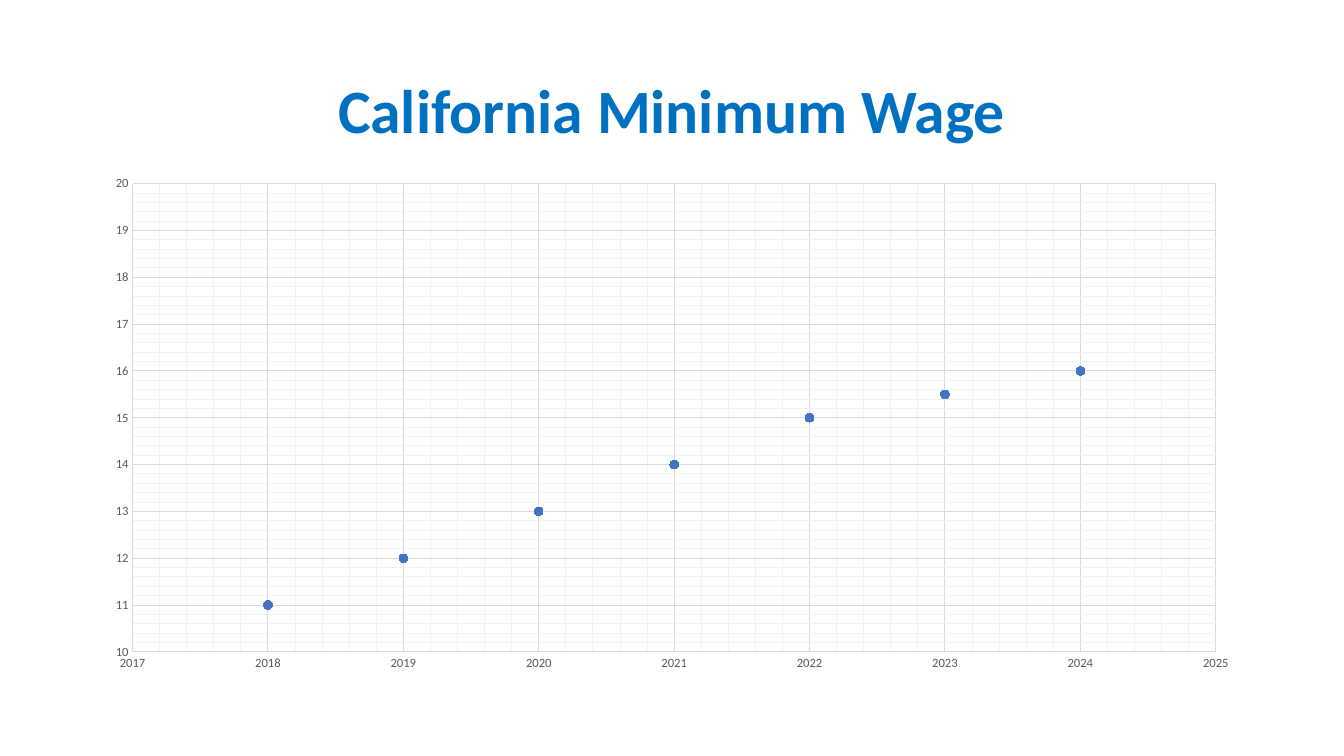
from pptx import Presentation
from pptx.chart.data import XyChartData
from pptx.dml.color import RGBColor
from pptx.enum.chart import XL_CHART_TYPE, XL_MARKER_STYLE, XL_TICK_MARK
from pptx.enum.text import MSO_ANCHOR, PP_ALIGN
from pptx.oxml import parse_xml
from pptx.oxml.ns import nsdecls
from pptx.util import Cm, Pt

SCATTER_LINES = XL_CHART_TYPE.XY_SCATTER_LINES
CIRCLE = XL_MARKER_STYLE.CIRCLE
NO_TICK = XL_TICK_MARK.NONE
MIDDLE = MSO_ANCHOR.MIDDLE
CENTER = PP_ALIGN.CENTER

HEADING = "California Minimum Wage"
SERIES_NAME = "Series 1"
WAGES = {2018: 11, 2019: 12, 2020: 13, 2021: 14, 2022: 15, 2023: 15.5, 2024: 16}
YEAR_RANGE = (2017, 2025)
WAGE_RANGE = (10, 20)
MINOR_STEP = 0.2

THEME = {
    "font": "Calibri",
    "heading": RGBColor(0x00, 0x70, 0xC0),
    "label": RGBColor(0x59, 0x59, 0x59),
    "grid": RGBColor(0xD9, 0xD9, 0xD9),
    "minor_grid": "F2F2F2",
    "dot": RGBColor(0x44, 0x72, 0xC4),
    "heading_size": Pt(44),
    "chart_size": Pt(10),
    "label_size": Pt(9),
    "grid_width": Pt(0.75),
    "series_width": Pt(2),
    "dot_size": 6,
}

LEFT, WIDTH = Cm(2.33), Cm(29.21)
CHART_TOP, CHART_HEIGHT = Cm(4.19), Cm(12.98)
PLOT_LAYOUT = {
    "x": Cm(1.01) / WIDTH,
    "y": Cm(0.44) / CHART_HEIGHT,
    "w": Cm(27.3) / WIDTH,
    "h": Cm(11.8) / CHART_HEIGHT,
}


def add_heading(slide):
    frame = slide.shapes.add_textbox(LEFT, Cm(1.01), WIDTH, Cm(3.68)).text_frame
    frame.word_wrap = True
    frame.vertical_anchor = MIDDLE
    paragraph = frame.paragraphs[0]
    paragraph.alignment = CENTER
    paragraph.line_spacing = 0.9
    run = paragraph.add_run()
    run.text = HEADING
    run.font.name = THEME["font"]
    run.font.size = THEME["heading_size"]
    run.font.bold = True
    run.font.color.rgb = THEME["heading"]


def style_line(line, color, width):
    line.color.rgb = THEME[color]
    line.width = THEME[width]


def style_axis(axis, limits):
    axis.minimum_scale, axis.maximum_scale = limits
    axis.major_unit = 1
    axis.minor_unit = MINOR_STEP
    axis.major_tick_mark = axis.minor_tick_mark = NO_TICK
    axis.has_major_gridlines = axis.has_minor_gridlines = True
    style_line(axis.major_gridlines.format.line, "grid", "grid_width")
    labels = axis.tick_labels
    labels.number_format = "General"
    labels.number_format_is_linked = False
    labels.font.name = THEME["font"]
    labels.font.size = THEME["label_size"]
    labels.font.color.rgb = THEME["label"]


def style_minor_grid(chart):
    for grid in chart.element.xpath(".//c:minorGridlines"):
        grid.append(parse_xml(
            f'<c:spPr {nsdecls("c", "a")}><a:ln w="{THEME["grid_width"]}"><a:solidFill>'
            f'<a:srgbClr val="{THEME["minor_grid"]}"/></a:solidFill></a:ln></c:spPr>'))


def place_plot(chart):
    plot_area = chart.element.xpath(".//c:plotArea")[0]
    for layout in plot_area.xpath("./c:layout"):
        plot_area.remove(layout)
    modes = '<c:xMode val="edge"/><c:yMode val="edge"/>'
    sizes = "".join(f'<c:{key} val="{value:.4f}"/>' for key, value in PLOT_LAYOUT.items())
    plot_area.insert(0, parse_xml(
        f'<c:layout {nsdecls("c")}><c:manualLayout><c:layoutTarget val="inner"/>'
        f"{modes}{sizes}</c:manualLayout></c:layout>"))


def wage_data():
    data = XyChartData()
    points = data.add_series(SERIES_NAME)
    for index, (year, wage) in enumerate(WAGES.items()):
        if index:
            points.add_data_point(None, None)
        points.add_data_point(year, wage)
    return data


def clear_gap_points(chart):
    for point in chart.element.xpath('.//c:ser//c:pt[c:v="None" or c:v=""]'):
        point.getparent().remove(point)


def add_wage_chart(slide):
    chart = slide.shapes.add_chart(
        SCATTER_LINES, LEFT, CHART_TOP, WIDTH, CHART_HEIGHT, wage_data()).chart
    clear_gap_points(chart)
    chart.has_title = chart.has_legend = False
    chart.font.name = THEME["font"]
    chart.font.size = THEME["chart_size"]

    year_axis, wage_axis = chart.category_axis, chart.value_axis
    style_axis(year_axis, YEAR_RANGE)
    style_axis(wage_axis, WAGE_RANGE)
    style_line(year_axis.format.line, "grid", "grid_width")
    wage_axis.format.line.fill.background()
    style_minor_grid(chart)
    place_plot(chart)

    plot = chart.plots[0]
    plot.vary_by_categories = False
    wages = plot.series[0]
    wages.smooth = False
    style_line(wages.format.line, "dot", "series_width")
    wages.marker.style = CIRCLE
    wages.marker.size = THEME["dot_size"]
    wages.marker.format.fill.solid()
    wages.marker.format.fill.fore_color.rgb = THEME["dot"]
    wages.marker.format.line.color.rgb = THEME["dot"]


def main():
    deck = Presentation()
    deck.slide_width, deck.slide_height = Cm(33.87), Cm(19.05)
    slide = deck.slides.add_slide(deck.slide_layouts[6])
    add_heading(slide)
    add_wage_chart(slide)
    deck.save("out.pptx")


if __name__ == "__main__":
    main()
